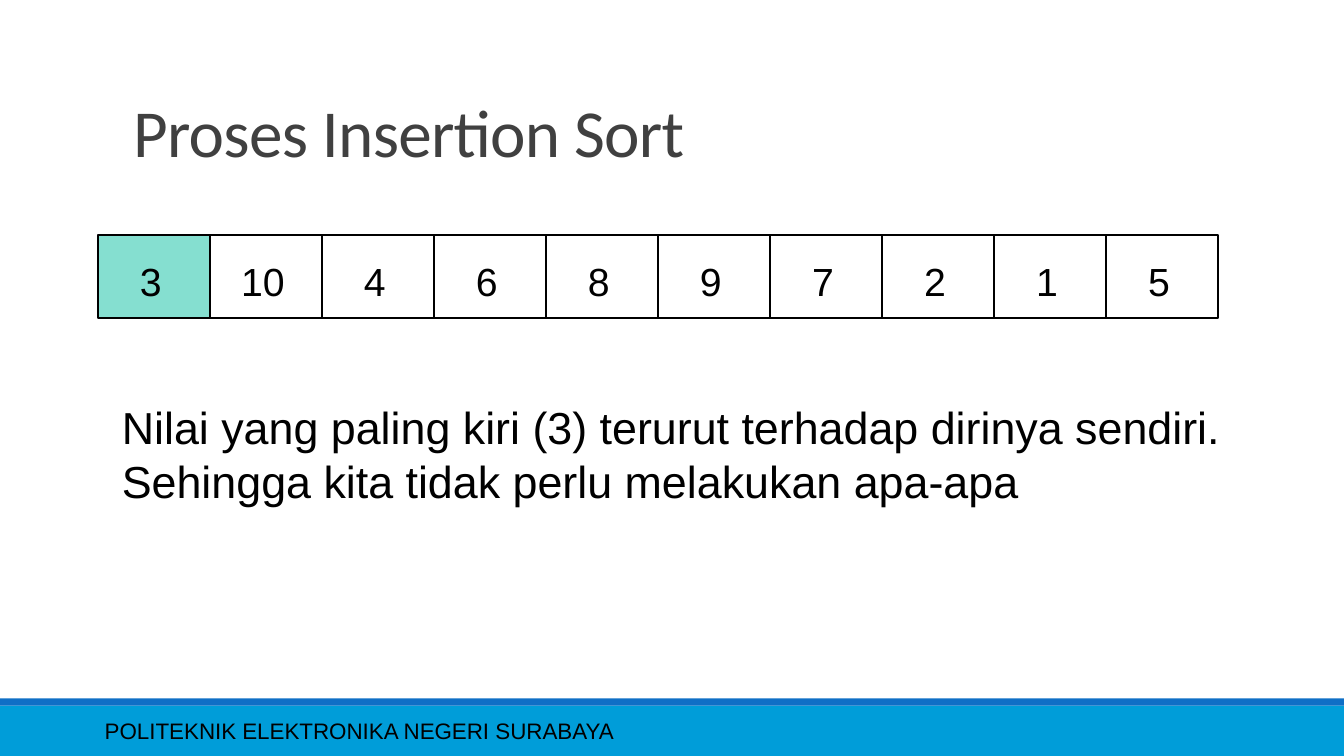
"""Build the slide on the first step of insertion sort."""
from pptx import Presentation
from pptx.dml.color import RGBColor
from pptx.enum import shapes, text
from pptx.util import Inches, Pt

TITLE = "Proses Insertion Sort"
VALUES = [3, 10, 4, 6, 8, 9, 7, 2, 1, 5]
SORTED_COUNT = 1
EXPLANATION = (
    "Nilai yang paling kiri (3) terurut terhadap dirinya sendiri. "
    "Sehingga kita tidak perlu melakukan apa-apa"
)
FOOTER = "POLITEKNIK ELEKTRONIKA NEGERI SURABAYA"
BANDS = [(7, 0.5, "009DD9"), (6.93, 0.07, "0F6FC6")]

SLIDE_WIDTH, SLIDE_HEIGHT = 13.33, 7.5
ROW_LEFT, ROW_TOP, ROW_WIDTH, CELL_HEIGHT = 0.97, 2.33, 11.11, 0.83
CELL_WIDTH = ROW_WIDTH / len(VALUES)
NUMBER_TOP, NUMBER_HEIGHT, NUMBER_SHIFT = 2.5, 0.57, -0.03


def color(value):
    return RGBColor.from_string(value)


def style_text(frame, content, size, font="Arial", fill="000000"):
    frame.text = content
    for span in frame.paragraphs[0].runs:
        span.font.name = font
        span.font.size = Pt(size)
        span.font.color.rgb = color(fill)


def add_rectangle(page, left, top, width, height, fill=None, line=None):
    box = page.shapes.add_shape(
        shapes.MSO_SHAPE.RECTANGLE,
        Inches(left), Inches(top), Inches(width), Inches(height),
    )
    box.shadow.inherit = False
    if fill:
        box.fill.solid()
        box.fill.fore_color.rgb = color(fill)
    else:
        box.fill.background()
    if line:
        box.line.color.rgb = color(line)
        box.line.width = Pt(1.5)
    else:
        box.line.fill.background()


def add_text(page, left, top, width, height, content, size, wrap=True):
    box = page.shapes.add_textbox(
        Inches(left), Inches(top), Inches(width), Inches(height)
    )
    frame = box.text_frame
    frame.word_wrap = wrap
    style_text(frame, content, size)
    return frame


def add_title(page):
    title = page.shapes.title
    title.left, title.top = Inches(1.22), Inches(0.5)
    title.width, title.height = Inches(11.36), Inches(1.25)
    frame = title.text_frame
    frame.vertical_anchor = text.MSO_ANCHOR.BOTTOM
    style_text(frame, TITLE, 48, "Calibri", "404040")
    para = frame.paragraphs[0]
    para.alignment = text.PP_ALIGN.LEFT
    para.line_spacing = 0.85
    para.runs[0].font._element.set("spc", "-50")


def add_array(page):
    lefts = [ROW_LEFT + index * CELL_WIDTH for index in range(len(VALUES))]
    for index, left in enumerate(lefts):
        fill = "85DFD0" if index < SORTED_COUNT else None
        add_rectangle(page, left, ROW_TOP, CELL_WIDTH, CELL_HEIGHT, fill, "000000")
    for left, value in zip(lefts, VALUES):
        width = 0.42 if value < 10 else 0.64
        number_left = left + (CELL_WIDTH - width) / 2 + NUMBER_SHIFT
        frame = add_text(
            page, number_left, NUMBER_TOP, width, NUMBER_HEIGHT, str(value), 28, False
        )
        frame.paragraphs[0].alignment = text.PP_ALIGN.CENTER


def main():
    deck = Presentation()
    deck.slide_width, deck.slide_height = Inches(SLIDE_WIDTH), Inches(SLIDE_HEIGHT)
    page = deck.slides.add_slide(deck.slide_layouts[5])
    for top, height, fill in BANDS:
        add_rectangle(page, 0, top, SLIDE_WIDTH, height, fill)
    footer = add_text(page, 0.94, 7.05, 8.41, 0.4, FOOTER, 16)
    footer.vertical_anchor = text.MSO_ANCHOR.MIDDLE
    add_array(page)
    add_text(page, 1.11, 3.92, 11.33, 1.18, EXPLANATION, 32)
    add_title(page)
    deck.save("out.pptx")


if __name__ == "__main__":
    main()
